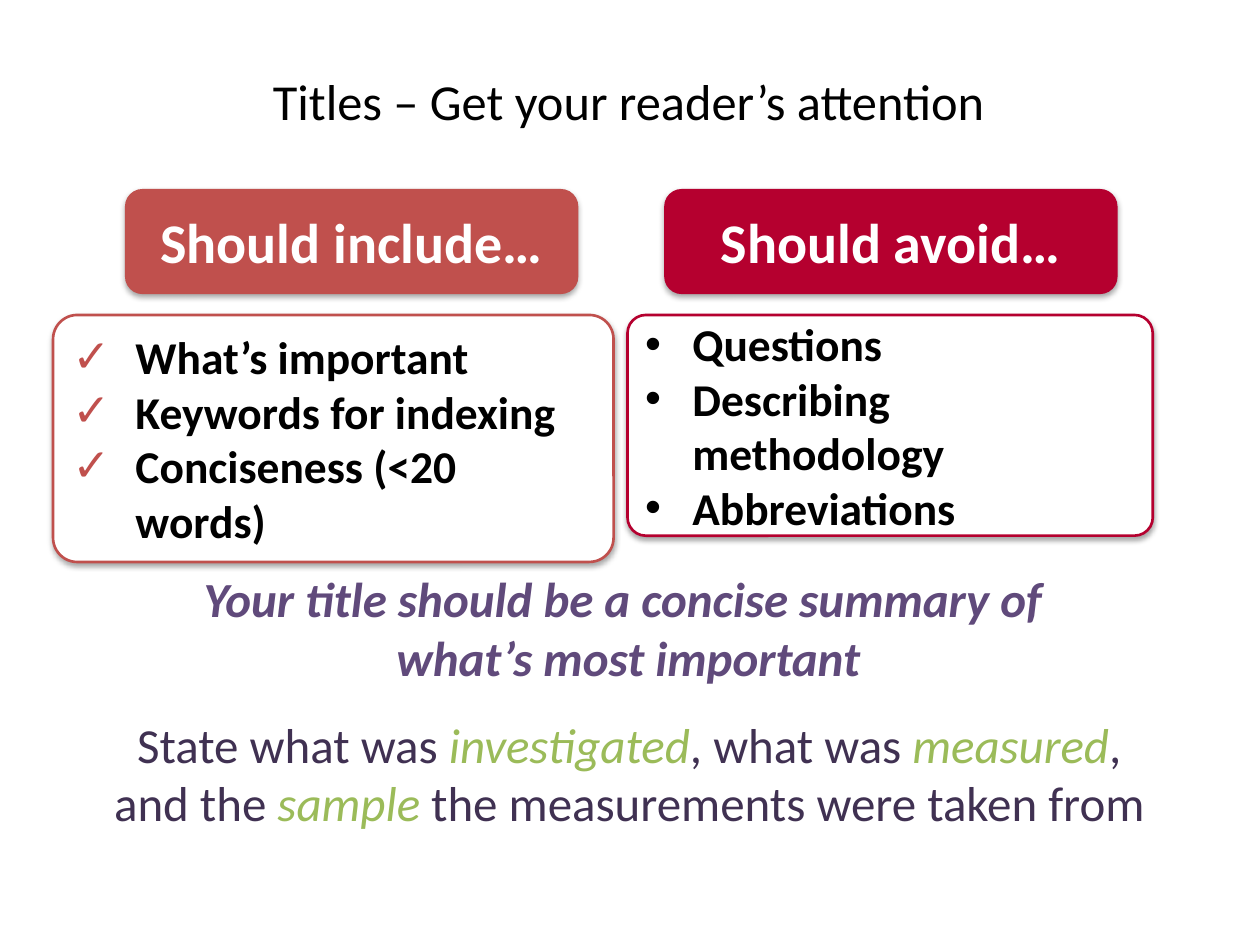
from lxml import etree
from pptx import Presentation
from pptx.dml.color import RGBColor
from pptx.enum.shapes import MSO_SHAPE
from pptx.enum.text import MSO_ANCHOR, PP_ALIGN
from pptx.oxml import parse_xml
from pptx.oxml.ns import nsdecls, qn
from pptx.util import Cm, Pt

ROUNDED = MSO_SHAPE.ROUNDED_RECTANGLE
MIDDLE = MSO_ANCHOR.MIDDLE
CENTER, LEFT = PP_ALIGN.CENTER, PP_ALIGN.LEFT
FONT = "Calibri"
COLORS = {
    "black": "000000",
    "white": "FFFFFF",
    "include": "C0504D",
    "avoid": "B5002F",
    "summary": "604A7B",
    "advice": "403152",
    "keyword": "9BBB59",
}


def rgb(name):
    return RGBColor.from_string(COLORS[name])


def add_run(paragraph, text, size, color, bold=False, italic=False):
    run = paragraph.add_run()
    run.text = text
    font = run.font
    font.name, font.size = FONT, Pt(size)
    font.bold, font.italic = bold, italic
    font.color.rgb = rgb(color)


def next_paragraph(frame, index, align):
    paragraph = frame.add_paragraph() if index else frame.paragraphs[0]
    paragraph.alignment = align
    return paragraph


def add_soft_shadow(shape):
    shape.shadow.inherit = False
    effects = shape._element.spPr.find(qn("a:effectLst"))
    effects.append(parse_xml(
        f'<a:outerShdw {nsdecls("a")} blurRad="40000" dist="23000" dir="5400000" '
        f'rotWithShape="0"><a:srgbClr val="{COLORS["black"]}">'
        '<a:alpha val="35000"/></a:srgbClr></a:outerShdw>'))


def add_card(slide, box, fill, outline=None, corner=None):
    card = slide.shapes.add_shape(ROUNDED, *map(Cm, box))
    if corner is not None:
        card.adjustments[0] = corner
    card.fill.solid()
    card.fill.fore_color.rgb = rgb(fill)
    if outline:
        card.line.color.rgb = rgb(outline)
        card.line.width = Pt(1.5)
    else:
        card.line.fill.background()
    add_soft_shadow(card)
    card.text_frame.word_wrap = True
    card.text_frame.vertical_anchor = MIDDLE
    return card


def set_bullet(paragraph, mark, indent, color):
    properties = paragraph._p.get_or_add_pPr()
    properties.set("marL", str(Cm(indent)))
    properties.set("indent", str(-Cm(indent)))
    bullet_color = etree.SubElement(properties, qn("a:buClr"))
    etree.SubElement(bullet_color, qn("a:srgbClr"), val=COLORS[color])
    etree.SubElement(properties, qn("a:buFont"), typeface="Arial")
    etree.SubElement(properties, qn("a:buChar"), char=mark)


def add_title(slide, box, text):
    title = slide.shapes.title
    title.left, title.top, title.width, title.height = map(Cm, box)
    title.text_frame.vertical_anchor = MIDDLE
    add_run(next_paragraph(title.text_frame, 0, CENTER), text, 28.8, "black")


def add_checklist(slide, box, color, heading, items, list_inset, corner, bullet):
    """Heading card, with a list card below that reaches out past its sides."""
    left, top, width, height = box
    heading_height, gap = 2.12, 0.42
    heading_card = add_card(slide, (left + list_inset, top, 9.14, heading_height), color)
    add_run(next_paragraph(heading_card.text_frame, 0, CENTER),
            heading, 32, "white", bold=True)

    list_top = heading_height + gap
    list_card = add_card(slide, (left, top + list_top, width, height - list_top),
                         "white", color, corner)
    for index, item in enumerate(items):
        paragraph = next_paragraph(list_card.text_frame, index, LEFT)
        set_bullet(paragraph, *bullet)
        add_run(paragraph, item, 26, "black", bold=True)


def add_message(slide, box, lines):
    """Centred text; each line is a list of (text, color, bold, italic)."""
    frame = slide.shapes.add_textbox(*map(Cm, box)).text_frame
    frame.word_wrap = True
    for index, line in enumerate(lines):
        paragraph = next_paragraph(frame, index, CENTER)
        for text, color, bold, italic in line:
            add_run(paragraph, text, 28, color, bold, italic)


def main():
    prs = Presentation()
    prs.slide_width, prs.slide_height = Cm(25.4), Cm(19.05)
    slide = prs.slides.add_slide(prs.slide_layouts[5])

    add_title(slide, (2.11, 1.5, 21.13, 1.04), "Titles – Get your reader’s attention")

    # Two lists side by side
    add_checklist(slide, (1.07, 3.81, 11.3, 7.52), "include", "Should include…",
                  ["What’s important", "Keywords for indexing", "Conciseness (<20 words)"],
                  1.45, 0.098, ("✓", 1.27, "include"))
    add_checklist(slide, (12.65, 3.81, 10.59, 6.99), "avoid", "Should avoid…",
                  ["Questions", "Describing methodology", "Abbreviations"],
                  0.74, 0.083, ("•", 0.95, "black"))

    # Takeaway
    add_message(slide, (1.96, 11.33, 21.41, 2.64), [
        [(line, "summary", True, True)]
        for line in ("Your title should be a concise summary of ", "what’s most important")
    ])

    # Advice, with every second part a highlighted keyword
    advice = ["State what was ", "investigated", ", what was ", "measured",
              ", and the ", "sample", " the measurements were taken from"]
    add_message(slide, (1.98, 14.27, 21.41, 2.64), [[
        (part, "keyword" if index % 2 else "advice", False, index % 2 == 1)
        for index, part in enumerate(advice)
    ]])

    prs.save("out.pptx")


if __name__ == "__main__":
    main()
